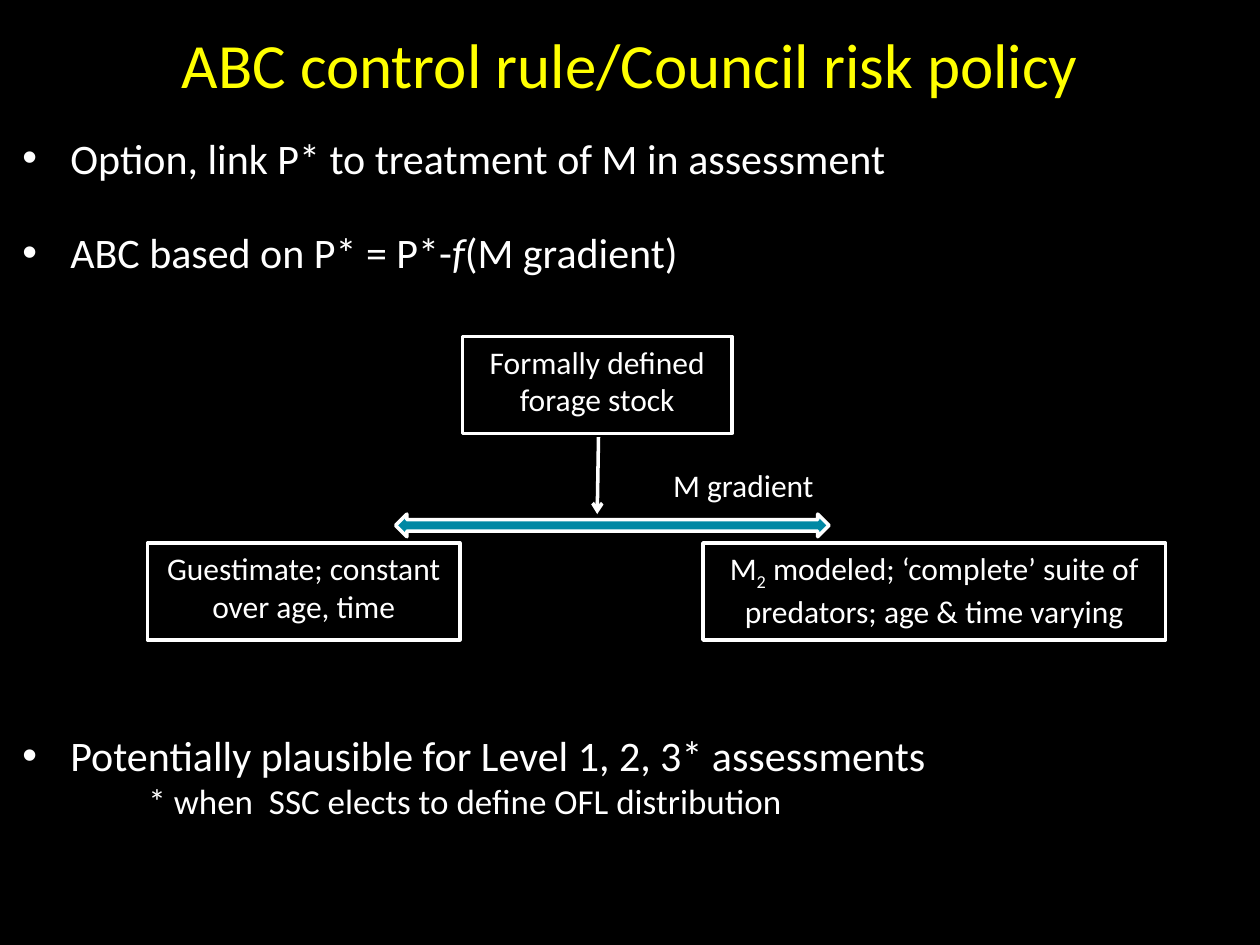
from lxml import etree
from pptx import Presentation
from pptx.dml.color import RGBColor
from pptx.enum.shapes import MSO_CONNECTOR as CONNECTOR, MSO_SHAPE as SHAPE
from pptx.enum.text import MSO_ANCHOR as ANCHOR, PP_ALIGN as ALIGN
from pptx.oxml.ns import qn
from pptx.util import Inches, Pt

BLACK = RGBColor(0x00, 0x00, 0x00)
WHITE = RGBColor(0xFF, 0xFF, 0xFF)
YELLOW = RGBColor(0xFF, 0xFF, 0x00)
TEAL = RGBColor(0x00, 0x88, 0xA4)
FONT = "Calibri"
BULLET_INDENT = 0.38
NOTE_INDENT = 1

# Runs are (text, style); style is "", "italic" or "subscript".
TITLE = [("ABC control rule/Council risk policy", "")]
TITLE_PLACE = (0, 0.15, 10, 0.71)
BULLETS = [
    ((0.08, 1, 9.75, 0.5), [("Option, link P* to treatment of M in assessment", "")]),
    ((0.08, 1.75, 5.67, 0.5),
     [("ABC based on P* = P*-", ""), ("f", "italic"), ("(M gradient)", "")]),
    ((0.08, 5.74, 7.58, 0.84),
     [("Potentially plausible for Level 1, 2, 3* assessments", "")]),
]
NOTE = [("* when  SSC elects to define OFL distribution", "")]

FRAMES = [
    ((3.67, 2.67, 2.14, 0.77), [("Formally defined forage stock", "")]),
    ((1.17, 4.31, 2.48, 0.77), [("Guestimate; constant over age, time", "")]),
    ((5.58, 4.31, 3.67, 0.77),
     [("M", ""), ("2", "subscript"),
      (" modeled; ‘complete’ suite of predators; age & time varying", "")]),
]
GRADIENT_LABEL = [("M gradient", "")]
GRADIENT_LABEL_PLACE = (4.83, 3.65, 2.14, 0.44)
GRADIENT_ARROW_PLACE = (3.14, 4.08, 3.44, 0.18)
POINTER_ENDS = (4.75, 3.47, 4.74, 4.08)


def inches(values):
    return [Inches(value) for value in values]


def write(para, runs, size, color=WHITE, align=ALIGN.LEFT):
    para.alignment = align
    for text, style in runs:
        run = para.add_run()
        run.text = text
        font = run.font
        font.name, font.size = FONT, Pt(size)
        font.color.rgb = color
        if style == "italic":
            font.italic = True
        elif style == "subscript":
            font._element.set("baseline", "-25000")


def indent(para, left, hanging=0, bullet=None):
    properties = para._p.get_or_add_pPr()
    properties.set("marL", str(Inches(left)))
    properties.set("indent", str(-Inches(hanging)))
    if bullet:
        etree.SubElement(properties, qn("a:buFont")).set("typeface", "Arial")
        etree.SubElement(properties, qn("a:buChar")).set("char", bullet)


def add_text(shapes, place):
    frame = shapes.add_textbox(*inches(place)).text_frame
    frame.word_wrap = True
    return frame


def add_outlined(shapes, kind, place):
    shape = shapes.add_shape(kind, *inches(place))
    shape.shadow.inherit = False
    shape.fill.background()
    shape.line.color.rgb = WHITE
    shape.line.width = Pt(2)
    return shape


def add_pointer(shapes, ends):
    pointer = shapes.add_connector(CONNECTOR.STRAIGHT, *inches(ends))
    pointer.line.color.rgb = WHITE
    pointer.line.width = Pt(2)
    etree.SubElement(pointer.line._get_or_add_ln(), qn("a:tailEnd")).set("type", "arrow")
    etree.SubElement(pointer._element.spPr, qn("a:effectLst"))


def add_diagram(page):
    shapes = page.shapes.add_group_shape().shapes
    for place, runs in FRAMES:
        frame = add_outlined(shapes, SHAPE.RECTANGLE, place).text_frame
        frame.word_wrap = True
        frame.vertical_anchor = ANCHOR.TOP
        write(frame.paragraphs[0], runs, 18, align=ALIGN.CENTER)
    add_pointer(shapes, POINTER_ENDS)
    arrow = add_outlined(shapes, SHAPE.LEFT_RIGHT_ARROW, GRADIENT_ARROW_PLACE)
    arrow.fill.solid()
    arrow.fill.fore_color.rgb = TEAL
    label = add_text(shapes, GRADIENT_LABEL_PLACE)
    write(label.paragraphs[0], GRADIENT_LABEL, 18, align=ALIGN.CENTER)


def main():
    deck = Presentation()
    deck.slide_width, deck.slide_height = Inches(10), Inches(7.5)
    page = deck.slides.add_slide(deck.slide_layouts[6])
    page.background.fill.solid()
    page.background.fill.fore_color.rgb = BLACK

    title = add_text(page.shapes, TITLE_PLACE)
    write(title.paragraphs[0], TITLE, 36, YELLOW, ALIGN.CENTER)
    add_diagram(page)
    for place, runs in BULLETS:
        frame = add_text(page.shapes, place)
        indent(frame.paragraphs[0], BULLET_INDENT, BULLET_INDENT, "•")
        write(frame.paragraphs[0], runs, 24)
    note = frame.add_paragraph()
    note.level = 2
    indent(note, NOTE_INDENT)
    write(note, NOTE, 20)
    deck.save("out.pptx")


if __name__ == "__main__":
    main()
